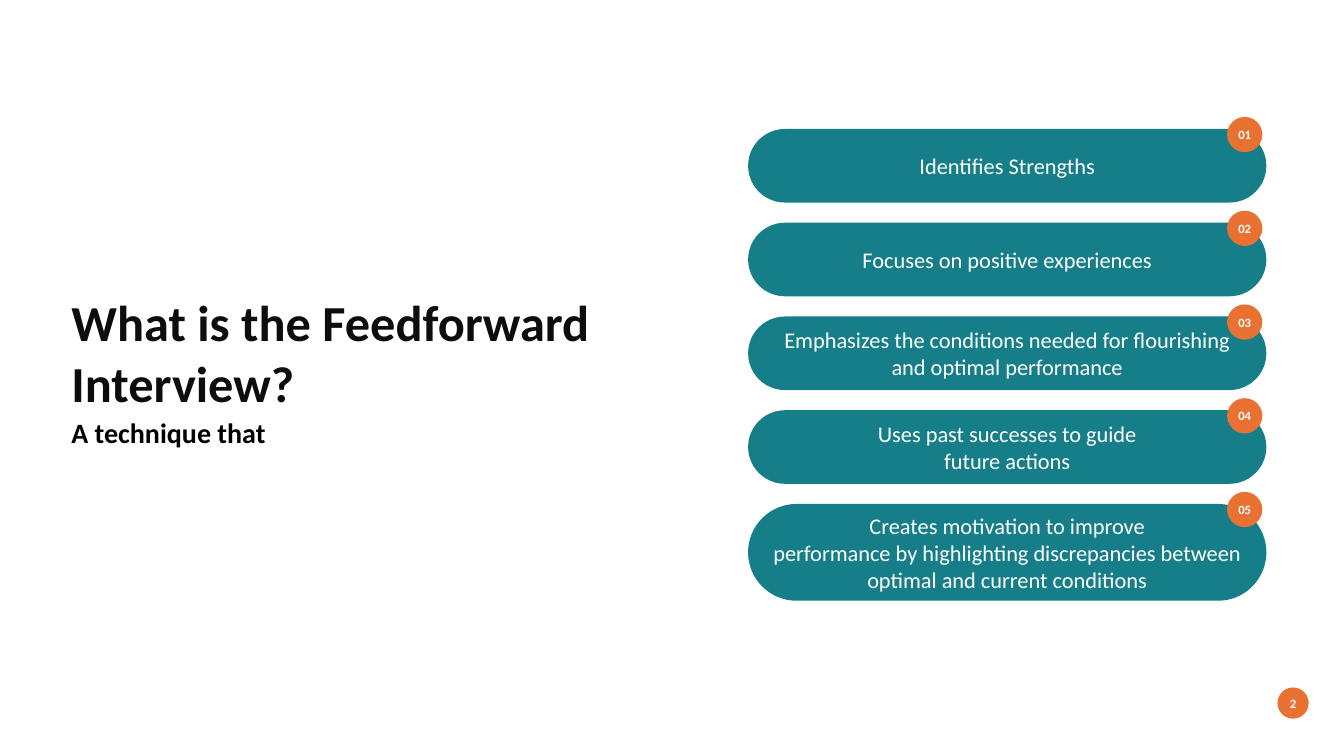
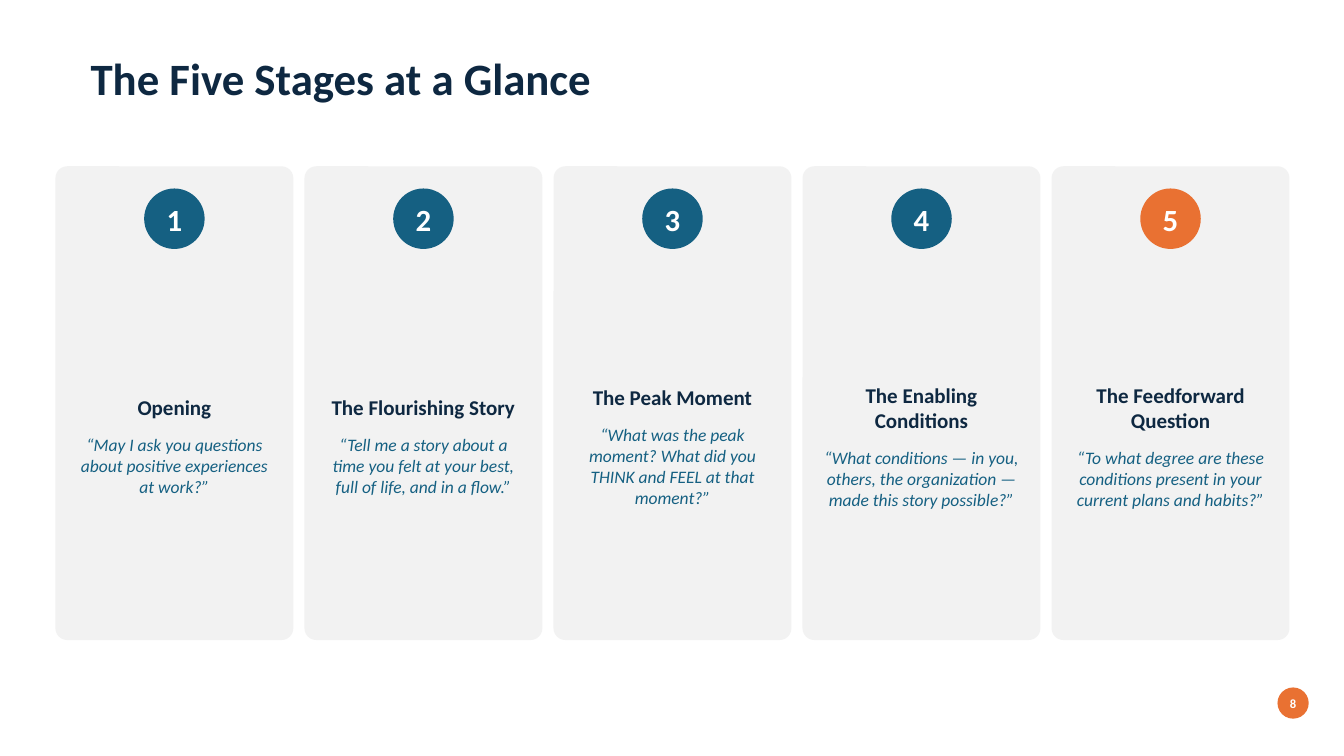
from dataclasses import dataclass

from pptx import Presentation
from pptx import util as u
from pptx.dml.color import RGBColor
from pptx.enum import shapes, text

PX = 9144  # EMU per px, 100 px to the inch


@dataclass(frozen=True)
class Theme:
    font: str = "Calibri"
    white: str = "FFFFFF"
    black: str = "000000"
    ink: str = "0D0D0D"
    navy: str = "0E2841"
    blue: str = "156082"
    teal: str = "157E88"
    orange: str = "E97132"
    card: str = "F2F2F2"
    question: float = 36
    title: float = 32
    number: float = 22
    subtitle: float = 20
    trait: float = 16
    stage: float = 15
    quote: float = 12.5
    badge: float = 9


theme = Theme()
OVAL = shapes.MSO_SHAPE.OVAL
ROUNDED = shapes.MSO_SHAPE.ROUNDED_RECTANGLE
CENTER, LEFT = text.PP_ALIGN.CENTER, text.PP_ALIGN.LEFT


def write(frame, lines, size, color, bold=False, italic=False, align=CENTER, before=0):
    """Fill the frame's empty first paragraph, then append further ones."""
    frame.word_wrap = True
    for line in lines:
        first = frame.paragraphs[0]
        paragraph = frame.add_paragraph() if first.runs else first
        paragraph.alignment = align
        if before:
            paragraph.space_before = u.Pt(before)
        run = paragraph.add_run()
        run.text = line
        run.font.name = theme.font
        run.font.size = u.Pt(size)
        run.font.bold = bold
        run.font.italic = italic
        run.font.color.rgb = RGBColor.from_string(color)


def add_panel(slide, preset, box, fill, insets=(10, 5, 10, 5), corner=None):
    """Add a flat filled shape and return its text frame."""
    panel = slide.shapes.add_shape(preset, *(n * PX for n in box))
    panel.shadow.inherit = False
    panel.fill.solid()
    panel.fill.fore_color.rgb = RGBColor.from_string(fill)
    panel.line.fill.background()
    if corner is not None:
        panel.adjustments[0] = corner
    frame = panel.text_frame
    frame.vertical_anchor = text.MSO_ANCHOR.MIDDLE
    frame.margin_left, frame.margin_top, frame.margin_right, frame.margin_bottom = (
        n * PX for n in insets)
    return frame


prs = Presentation()
prs.slide_width, prs.slide_height = 1333 * PX, 750 * PX
blank = prs.slide_layouts[6]
interview, stages = prs.slides.add_slide(blank), prs.slides.add_slide(blank)

# Headings and page numbers
for slide, page, box, heading, size, color in (
    (interview, "2", (61, 284, 581, 168), "What is the Feedforward Interview?",
     theme.question, theme.ink),
    (stages, "8", (80, 45, 900, 90), "The Five Stages at a Glance",
     theme.title, theme.navy),
):
    heading_frame = slide.shapes.add_textbox(*(n * PX for n in box)).text_frame
    write(heading_frame, [heading], size, color, bold=True, align=LEFT)
    if slide is interview:
        write(heading_frame, ["A technique that"], theme.subtitle, theme.black,
              bold=True, align=LEFT, before=2)
    page_badge = add_panel(slide, OVAL, (1267, 682, 31, 31), theme.orange, (0, 0, 0, 0))
    write(page_badge, [page], theme.badge, theme.white, bold=True)

# Interview traits: a column of pills with numbered badges
traits = [
    ["Identifies Strengths"],
    ["Focuses on positive experiences"],
    ["Emphasizes the conditions needed for flourishing and optimal performance"],
    ["Uses past successes to guide", "future actions"],
    ["Creates motivation to improve",
     "performance by highlighting discrepancies between optimal and current conditions"],
]
for i, trait in enumerate(traits):
    top = 128 + 93 * i
    height = 96 if i == len(traits) - 1 else 73
    pill = add_panel(interview, ROUNDED, (742, top, 514, height), theme.teal, corner=0.5)
    write(pill, trait, theme.trait, theme.white)
    badge = add_panel(interview, OVAL, (1217, top - 12, 35, 35), theme.orange, (0, 0, 0, 0))
    write(badge, [f"{i + 1:02}"], theme.badge, theme.white, bold=True)

# Stage cards: a row, the last number highlighted
stage_cards = [
    ("Opening", "“May I ask you questions about positive experiences at work?”"),
    ("The Flourishing Story",
     "“Tell me a story about a time you felt at your best, full of life, and in a flow.”"),
    ("The Peak Moment",
     "“What was the peak moment? What did you THINK and FEEL at that moment?”"),
    ("The Enabling Conditions",
     "“What conditions — in you, others, the organization — made this story possible?”"),
    ("The Feedforward Question",
     "“To what degree are these conditions present in your current plans and habits?”"),
]
for i, (stage, quote) in enumerate(stage_cards):
    left = 55 + 247 * i
    card = add_panel(stages, ROUNDED, (left, 165, 236, 470), theme.card,
                     (16, 90, 16, 5), corner=0.05)
    write(card, [stage], theme.stage, theme.navy, bold=True)
    write(card, [quote], theme.quote, theme.blue, italic=True, before=10)
    accent = theme.orange if i == len(stage_cards) - 1 else theme.blue
    number = add_panel(stages, OVAL, (left + 88, 187, 60, 60), accent)
    write(number, [str(i + 1)], theme.number, theme.white, bold=True)

prs.save("out.pptx")
